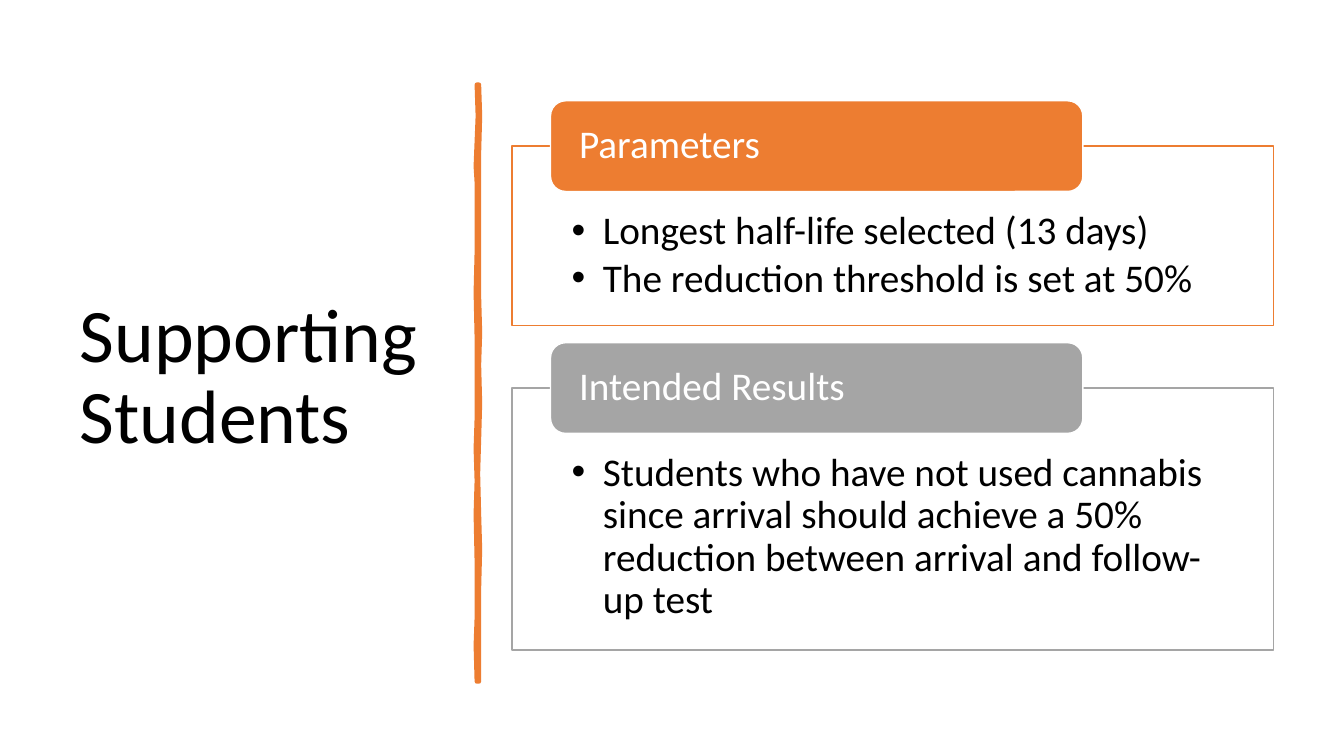
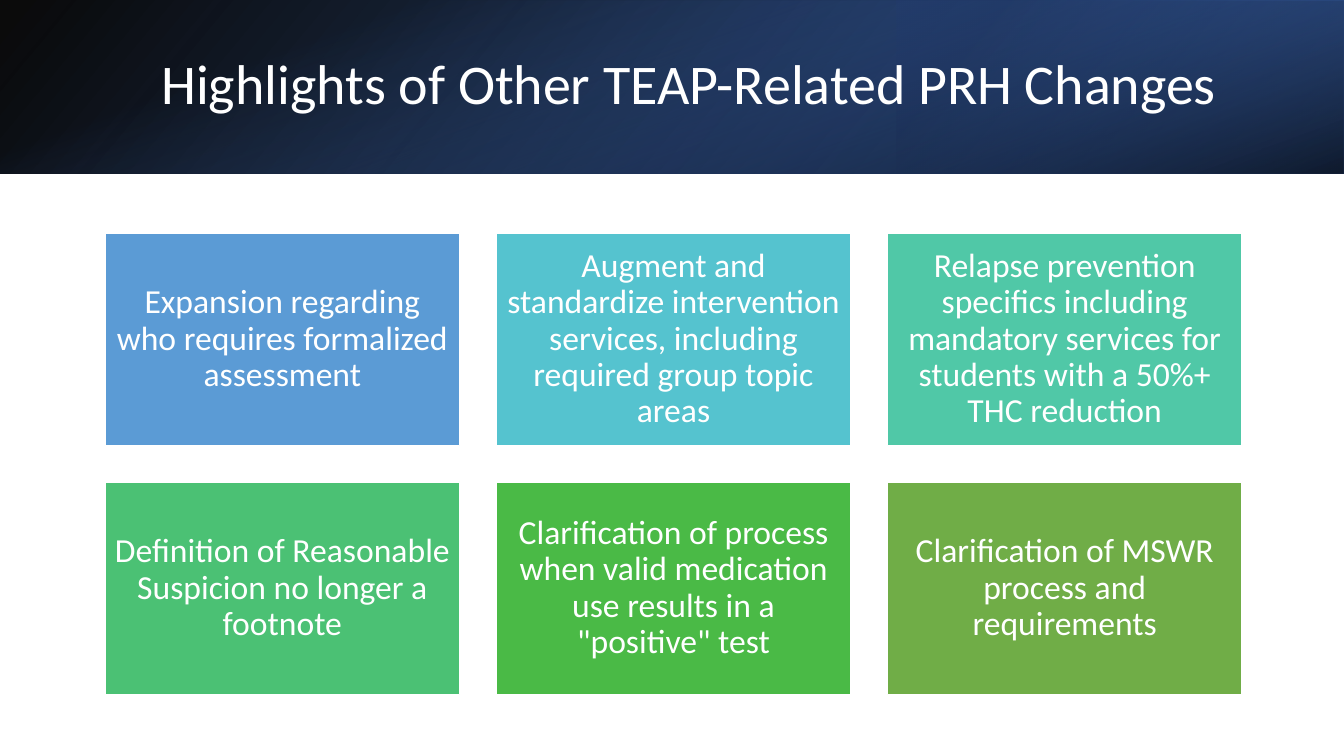
import pptx
import pptx.util
import pptx.dml.color
import pptx.enum.shapes
import pptx.enum.text
import pptx.oxml
import pptx.oxml.ns
import lxml.etree

RGB = pptx.dml.color.RGBColor
SHAPE = pptx.enum.shapes.MSO_SHAPE
ALIGN = pptx.enum.text.PP_ALIGN
ANCHOR = pptx.enum.text.MSO_ANCHOR
qn = pptx.oxml.ns.qn

PX = 9144
SLIDE_W, SLIDE_H = 1333, 750
FONT = "Calibri"
BLACK = RGB(0x00, 0x00, 0x00)
WHITE = RGB(0xFF, 0xFF, 0xFF)
ORANGE = RGB(0xED, 0x7D, 0x31)
GRAY = RGB(0xA5, 0xA5, 0xA5)
BLUE = RGB(0x44, 0x72, 0xC4)
DEEP_BLUE = RGB(0x2F, 0x55, 0x97)
NAVY = RGB(0x20, 0x38, 0x64)
CARD_COLORS = [
    RGB(0x5B, 0x9B, 0xD5), RGB(0x55, 0xC3, 0xCF), RGB(0x50, 0xC8, 0xA7),
    RGB(0x4B, 0xC1, 0x74), RGB(0x4A, 0xBA, 0x46), RGB(0x70, 0xAD, 0x47),
]
BRUSH = [
    (475, 84), (476, 115), (475, 152), (475, 226), (475, 294), (476, 330),
    (475, 362), (476, 400), (475, 436), (474, 470), (475, 510), (476, 545),
    (475, 584), (475, 625), (475, 676), (473, 676), (472, 640), (473, 613),
    (473, 557), (472, 510), (473, 477), (472, 445), (473, 415), (473, 335),
    (472, 290), (473, 250), (473, 181), (472, 165), (474, 115), (473, 84),
]


def emu(px):
    return pptx.util.Emu(px * PX)


class Deck:
    def __init__(self):
        self.prs = pptx.Presentation()
        self.prs.slide_width = emu(SLIDE_W)
        self.prs.slide_height = emu(SLIDE_H)
        self.s = None

    def slide(self, layout):
        self.s = self.prs.slides.add_slide(self.prs.slide_layouts[layout])

    def place(self, sp, box):
        sp.left, sp.top, sp.width, sp.height = map(emu, box)

    def paint(self, sp, fill, line, width=1):
        sp.fill.solid()
        sp.fill.fore_color.rgb = fill
        sp.line.color.rgb = line
        sp.line.width = pptx.util.Pt(width)

    def opacity(self, sp, *percents):
        colors = sp._element.spPr.iter(qn("a:srgbClr"))
        for color, percent in zip(list(colors), percents):
            alpha = lxml.etree.SubElement(color, qn("a:alpha"))
            alpha.set("val", str(percent * 1000))

    def add_text(self, sp, lines, size, color, align=ALIGN.LEFT,
                 anchor=ANCHOR.MIDDLE, insets=(10, 5, 10, 5), after=0):
        tf = sp.text_frame
        tf.word_wrap = True
        tf.auto_size = pptx.enum.text.MSO_AUTO_SIZE.NONE
        tf.vertical_anchor = anchor
        (tf.margin_left, tf.margin_top,
         tf.margin_right, tf.margin_bottom) = map(emu, insets)
        for i, line in enumerate(lines):
            p = tf.add_paragraph() if i else tf.paragraphs[0]
            p.alignment = align
            p.line_spacing = 0.9
            p.space_before = pptx.util.Pt(0)
            p.space_after = pptx.util.Pt(after)
            r = p.add_run()
            r.text = line
            r.font.name = FONT
            r.font.size = pptx.util.Pt(size)
            r.font.color.rgb = color
        return tf

    def title(self, text, box, size, color):
        sp = self.s.shapes.title
        self.place(sp, box)
        self.add_text(sp, [text], size, color)

    def box(self, kind, box, fill, text, size, align, insets):
        sp = self.s.shapes.add_shape(kind, *map(emu, box))
        sp.shadow.inherit = False
        self.paint(sp, fill, WHITE)
        self.add_text(sp, [text], size, WHITE, align, insets=insets)

    def panel(self, idx, top, height, color, heading, bullets):
        sp = self.s.placeholders[idx]
        self.place(sp, (508, top, 755, height))
        self.paint(sp, WHITE, color)
        self.opacity(sp, 90)
        tf = self.add_text(sp, bullets, 28, BLACK, anchor=ANCHOR.TOP,
                           insets=(59, 64, 59, 22), after=4)
        for p in tf.paragraphs:
            pPr = p._p.get_or_add_pPr()
            pPr.set("marL", str(emu(31)))
            pPr.set("indent", str(-emu(31)))
        self.box(SHAPE.ROUNDED_RECTANGLE, (546, top - 45, 528, 90), color,
                 heading, 28, ALIGN.LEFT, (24, 0, 24, 0))

    def brush_line(self, points, color):
        builder = self.s.shapes.build_freeform(*points[0], scale=PX)
        builder.add_line_segments(points[1:], close=True)
        sp = builder.convert_to_shape()
        sp.shadow.inherit = False
        self.paint(sp, color, color, 3.25)

    def band(self, box, stops, angle, rotation=0, flip=False):
        sp = self.s.shapes.add_shape(SHAPE.RECTANGLE, *map(emu, box))
        sp.shadow.inherit = False
        sp.line.fill.background()
        sp.rotation = rotation
        if flip:
            sp._element.spPr.xfrm.set("flipH", "1")
        sp.fill.gradient()
        sp.fill.gradient_angle = 360 - angle
        for stop, (position, color, _) in zip(sp.fill.gradient_stops, stops):
            stop.position = position
            stop.color.rgb = color
        self.opacity(sp, *[stop[2] for stop in stops])
        self.s.shapes.title._element.addprevious(sp._element)

    def cards(self, texts, columns=3):
        for i, (text, color) in enumerate(zip(texts, CARD_COLORS)):
            row, col = divmod(i, columns)
            self.box(SHAPE.RECTANGLE,
                     (104 + col * 388, 231 + row * 247, 352, 211),
                     color, text, 24, ALIGN.CENTER, (10, 10, 10, 10))


def main():
    deck = Deck()

    deck.slide(3)
    deck.title("Supporting Students", (69, 70, 374, 611), 54, BLACK)
    deck.brush_line(BRUSH, ORANGE)
    deck.panel(1, 145, 178, ORANGE, "Parameters", [
        "Longest half-life selected (13 days)",
        "The reduction threshold is set at 50%",
    ])
    deck.panel(2, 385, 260, GRAY, "Intended Results", [
        "Students who have not used cannabis since arrival should achieve "
        "a 50% reduction between arrival and follow-up test",
    ])

    deck.slide(5)
    band_h = 172
    deck.band((0, 0, SLIDE_W, band_h),
              [(0, BLACK, 96), (1, DEEP_BLUE, 100)], 140, flip=True)
    deck.band((889, 0, 444, band_h),
              [(0.19, NAVY, 68), (1, BLUE, 79)], 320, 180, True)
    offset = (SLIDE_W - band_h) // 2
    deck.band((offset, -offset, band_h, SLIDE_W),
              [(0.23, BLUE, 0), (0.99, BLACK, 74)], 340, 90)
    deck.title("Highlights of Other TEAP-Related PRH Changes",
               (150, 38, 1098, 96), 40, WHITE)
    deck.cards([
        "Expansion regarding who requires formalized assessment",
        "Augment and standardize intervention services, including required "
        "group topic areas",
        "Relapse prevention specifics including mandatory services for "
        "students with a 50%+ THC reduction",
        "Definition of Reasonable Suspicion no longer a footnote",
        "Clarification of process when valid medication use results in a "
        "\"positive\" test",
        "Clarification of MSWR process and requirements",
    ])

    deck.prs.save("out.pptx")


if __name__ == "__main__":
    main()
